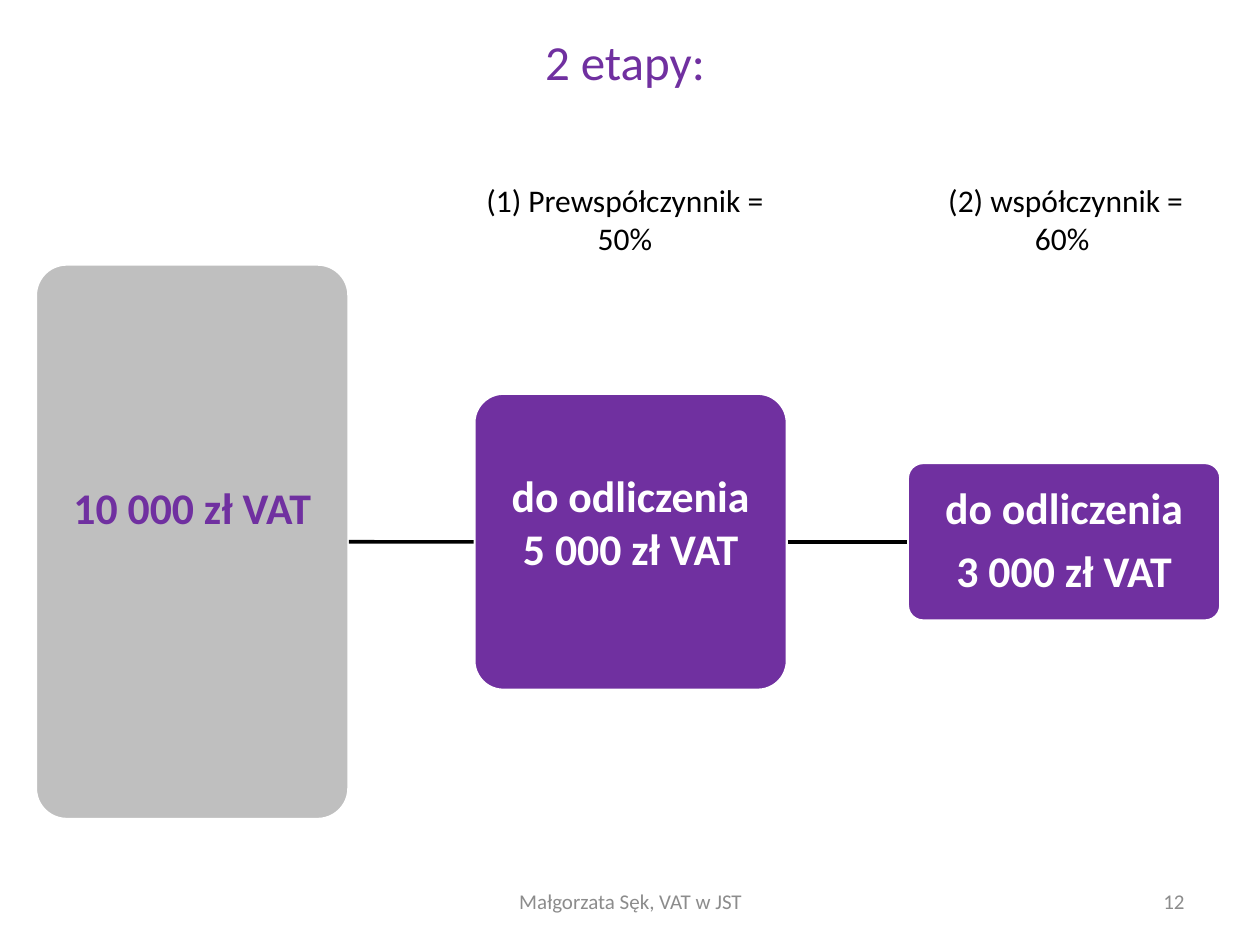
from dataclasses import dataclass

from lxml.etree import SubElement
from pptx import Presentation
from pptx.dml.color import RGBColor
from pptx.enum.shapes import MSO_CONNECTOR, MSO_SHAPE
from pptx.enum.text import MSO_ANCHOR, PP_ALIGN
from pptx.oxml.ns import qn
from pptx.shapes.autoshape import Shape
from pptx.slide import Slide
from pptx.text.text import TextFrame
from pptx.util import Inches, Pt

PURPLE = RGBColor(0x70, 0x30, 0xA0)
GREY = RGBColor(0xBF, 0xBF, 0xBF)
FOOTER_GREY = RGBColor(0x8C, 0x8C, 0x8C)
WHITE = RGBColor(0xFF, 0xFF, 0xFF)
BLACK = RGBColor(0x00, 0x00, 0x00)

STAGE_WIDTH = 2.49
STAGE_MIDDLE = 4.3
INSET = 0.02
LOOSE = {"line_spacing": 0.9, "space_after": Pt(8.75)}
TIGHT = {"line_spacing": 1.0}


@dataclass(frozen=True)
class Stage:
    left: float
    height: float
    fill: RGBColor
    color: RGBColor
    lines: tuple[str, ...]
    spacing: dict
    lift: float = 0


@dataclass(frozen=True)
class Label:
    text: str
    left: float
    top: float
    width: float
    height: float
    size: int
    color: RGBColor
    align: PP_ALIGN = PP_ALIGN.CENTER
    anchor: MSO_ANCHOR = MSO_ANCHOR.MIDDLE


STAGES = (
    Stage(0.28, 4.41, GREY, PURPLE, ("10 000 zł VAT",), LOOSE, 0.5),
    Stage(3.76, 2.36, PURPLE, WHITE, ("do odliczenia", "5 000 zł VAT"), TIGHT, 0.32),
    Stage(7.2, 1.26, PURPLE, WHITE, ("do odliczenia", "3 000 zł VAT"), LOOSE),
)

LABELS = (
    Label("2 etapy:", 1.14, 0.13, 7.64, 0.71, 28, PURPLE),
    Label("(1) Prewspółczynnik = 50%", 3.74, 1.39, 2.44, 0.71, 18, BLACK,
          anchor=MSO_ANCHOR.TOP),
    Label(" (2) współczynnik = 60%", 7.13, 1.39, 2.6, 0.71, 18, BLACK,
          anchor=MSO_ANCHOR.TOP),
    Label("12", 7.17, 6.95, 2.33, 0.4, 12, FOOTER_GREY, PP_ALIGN.RIGHT),
    Label("Małgorzata Sęk, VAT w JST", 3.42, 6.95, 3.17, 0.4, 12, FOOTER_GREY),
)


def apply(target: object, values: dict) -> None:
    for name, value in values.items():
        setattr(target, name, value)


def write_lines(frame: TextFrame, lines: tuple[str, ...], size: int,
                color: RGBColor, bold: bool, layout: dict) -> None:
    for index, line in enumerate(lines):
        para = frame.add_paragraph() if index else frame.paragraphs[0]
        apply(para, layout)
        span = para.add_run()
        span.text = line
        apply(span.font, {"name": "Calibri", "size": Pt(size), "bold": bold})
        span.font.color.rgb = color


def add_stage(page: Slide, stage: Stage) -> Shape:
    box = page.shapes.add_shape(
        MSO_SHAPE.ROUNDED_RECTANGLE, Inches(stage.left),
        Inches(STAGE_MIDDLE - stage.height / 2),
        Inches(STAGE_WIDTH), Inches(stage.height))
    box.adjustments[0] = 0.1
    box.shadow.inherit = False
    box.fill.solid()
    box.fill.fore_color.rgb = stage.fill
    box.line.color.rgb = WHITE
    box.line.width = Pt(2)
    apply(box.text_frame, {
        "word_wrap": True,
        "vertical_anchor": MSO_ANCHOR.MIDDLE,
        "margin_left": Inches(INSET),
        "margin_right": Inches(INSET),
        "margin_top": Inches(INSET),
        "margin_bottom": Inches(INSET + stage.lift),
    })
    write_lines(box.text_frame, stage.lines, 25, stage.color, True,
                {"alignment": PP_ALIGN.CENTER, **stage.spacing})
    return box


def add_link(page: Slide, start: Shape, end: Shape) -> None:
    middle = Inches(STAGE_MIDDLE)
    link = page.shapes.add_connector(
        MSO_CONNECTOR.STRAIGHT, start.left + start.width, middle, end.left, middle)
    link.begin_connect(start, 3)
    link.end_connect(end, 1)
    link.line.color.rgb = BLACK
    link.line.width = Pt(2)
    SubElement(link._element.spPr, qn("a:effectLst"))


def add_label(page: Slide, label: Label) -> None:
    box = page.shapes.add_textbox(Inches(label.left), Inches(label.top),
                                  Inches(label.width), Inches(label.height))
    apply(box.text_frame, {"word_wrap": True, "vertical_anchor": label.anchor})
    write_lines(box.text_frame, (label.text,), label.size, label.color, False,
                {"alignment": label.align})


def main() -> None:
    deck = Presentation()
    apply(deck, {"slide_width": Inches(10), "slide_height": Inches(7.5)})
    page = deck.slides.add_slide(deck.slide_layouts[6])
    boxes = [add_stage(page, stage) for stage in STAGES]
    for start, end in zip(boxes, boxes[1:]):
        add_link(page, start, end)
    for label in LABELS:
        add_label(page, label)
    deck.save("out.pptx")


if __name__ == "__main__":
    main()
